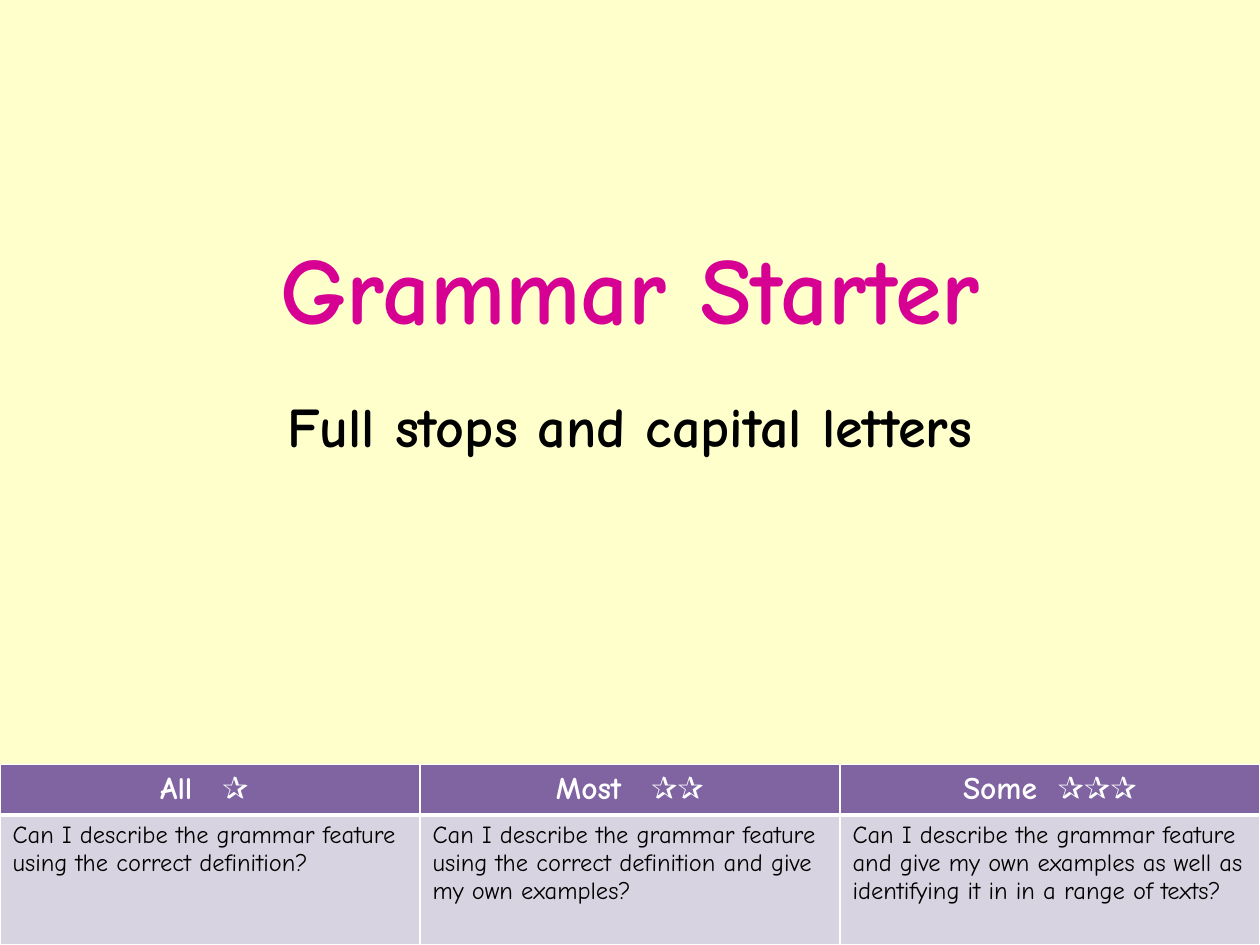
import pptx
import pptx.util
import pptx.dml.color
import pptx.enum.text
import pptx.oxml
import pptx.oxml.ns

Pt = pptx.util.Pt
ALIGN = pptx.enum.text.PP_ALIGN
ANCHOR = pptx.enum.text.MSO_ANCHOR

FONT = "Comic Neue"
COLORS = {
    "page": "FFFFCC",
    "title": "D60093",
    "text": "000000",
    "head": "8064A2",
    "body": "D8D3E0",
    "white": "FFFFFF",
}
WIDTH, HEIGHT = 720, 540

# text, box (left, top, width, height), size, color, anchor, space before
TITLES = [
    ("Grammar Starter", (54, 106, 612, 116), 54, "title", ANCHOR.MIDDLE, 0),
    ("Full stops and capital letters", (0, 220, 720, 138), 32, "text", ANCHOR.TOP, 6.4),
]

# label, stars, extra width of the gap between them, question
LEVELS = [
    ("All", "✰ ", 10.6, "Can I describe the grammar feature using the correct definition?"),
    ("Most", "✰✰", 10.6, "Can I describe the grammar feature using the correct definition "
     "and give my own examples?"),
    ("Some", "✰✰✰", 5.3, "Can I describe the grammar feature and give my own examples "
     "as well as identifying it in in a range of texts?"),
]
TABLE_TOP = 437
ROWS = (24, 74)


def rgb(name):
    return pptx.dml.color.RGBColor.from_string(COLORS[name])


def add_run(para, text, size, color, bold, track=0):
    """Add a styled run; track is extra letter spacing in points."""
    run = para.add_run()
    run.text = text
    font = run.font
    font.name, font.size, font.bold = FONT, Pt(size), bold
    font.color.rgb = rgb(color)
    if track:
        run._r.get_or_add_rPr().set("spc", str(round(track * 100)))


def add_edges(cell, widths):
    """Put white borders before the fill, as the schema orders them."""
    props = cell._tc.get_or_add_tcPr()
    for spot, (side, width) in enumerate(widths.items()):
        line = pptx.oxml.parse_xml(
            f'<a:ln{side} {pptx.oxml.ns.nsdecls("a")} w="{Pt(width)}">'
            f'<a:solidFill><a:srgbClr val="{COLORS["white"]}"/></a:solidFill>'
            f'</a:ln{side}>')
        props.insert(spot, line)


def style_cell(cell, fill, top, bottom):
    cell.fill.solid()
    cell.fill.fore_color.rgb = rgb(fill)
    add_edges(cell, {"L": 1, "R": 1, "T": top, "B": bottom})
    return cell.text_frame.paragraphs[0]


def add_title(slide, text, box, size, color, anchor, before):
    frame = slide.shapes.add_textbox(*map(Pt, box)).text_frame
    frame.word_wrap = True
    frame.vertical_anchor = anchor
    para = frame.paragraphs[0]
    para.alignment = ALIGN.CENTER
    para.space_before = Pt(before)
    add_run(para, text, size, color, True)


def add_levels(slide):
    count = len(LEVELS)
    table = slide.shapes.add_table(
        len(ROWS), count, 0, Pt(TABLE_TOP), Pt(WIDTH), Pt(sum(ROWS))).table
    for row, height in zip(table.rows, ROWS):
        row.height = Pt(height)
    for col, (label, stars, gap, question) in enumerate(LEVELS):
        table.columns[col].width = Pt(WIDTH / count)
        head = style_cell(table.cell(0, col), "head", 1, 3)
        head.alignment = ALIGN.CENTER
        for text, track in ((label, 0), (" ", gap), (stars, 0)):
            add_run(head, text, 18, "white", True, track)
        body = style_cell(table.cell(1, col), "body", 3, 1)
        add_run(body, question, 14, "text", False)


def main():
    deck = pptx.Presentation()
    deck.slide_width, deck.slide_height = Pt(WIDTH), Pt(HEIGHT)
    slide = deck.slides.add_slide(deck.slide_layouts[6])
    slide.background.fill.solid()
    slide.background.fill.fore_color.rgb = rgb("page")
    for title in TITLES:
        add_title(slide, *title)
    add_levels(slide)
    deck.save("out.pptx")


if __name__ == "__main__":
    main()
